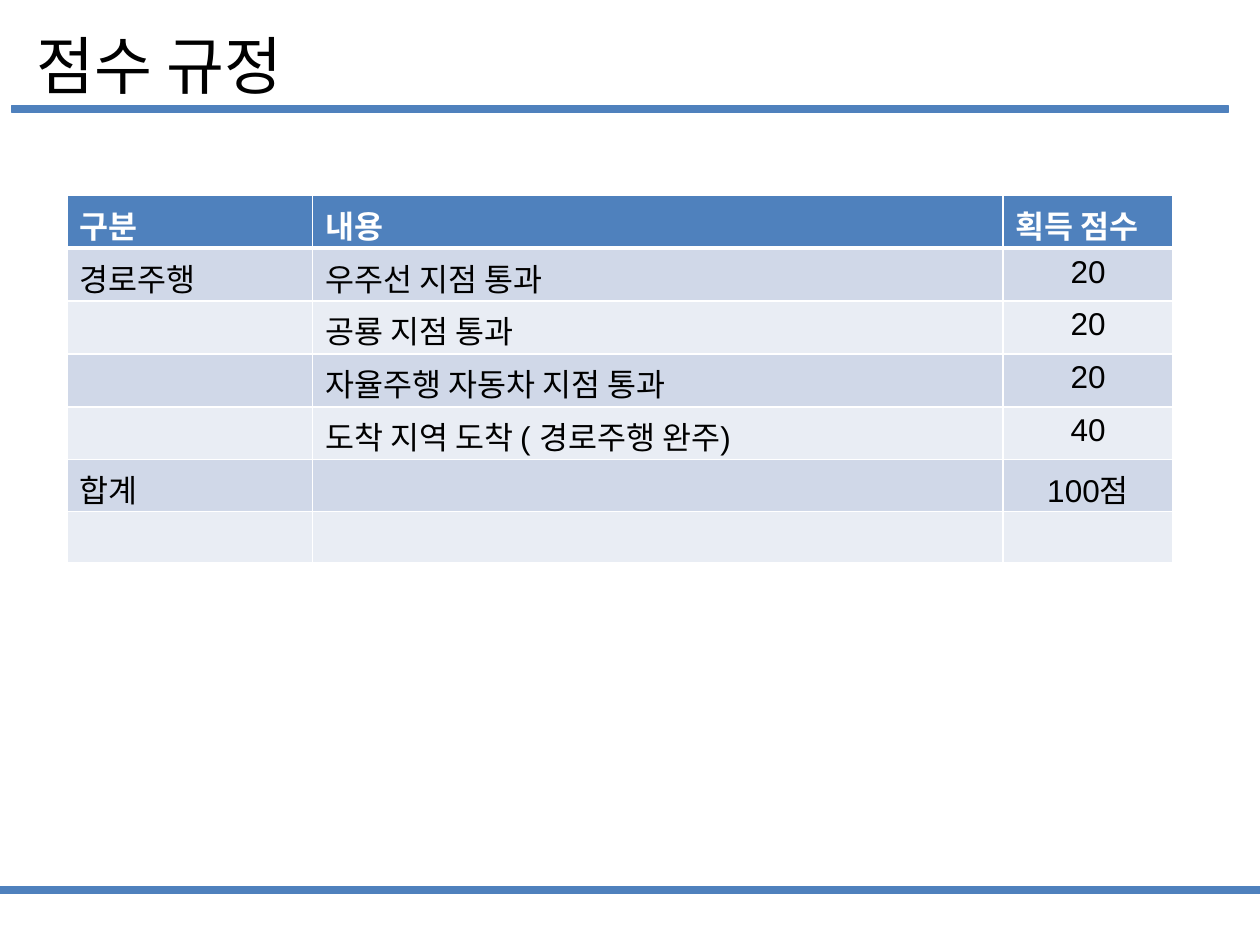
import dataclasses

import lxml.etree
import pptx
import pptx.dml.color
import pptx.enum.shapes
import pptx.enum.text
import pptx.oxml.ns
import pptx.util

Inches = pptx.util.Inches
Pt = pptx.util.Pt
qn = pptx.oxml.ns.qn
PP_ALIGN = pptx.enum.text.PP_ALIGN

ROWS = [
    ("구분", "내용", "획득 점수"),
    ("경로주행", "우주선 지점 통과", "20"),
    ("", "공룡 지점 통과", "20"),
    ("", "자율주행 자동차 지점 통과", "20"),
    ("", "도착 지역 도착 ( 경로주행 완주)", "40"),
    ("합계", "", "100점"),
    ("", "", ""),
]
COLUMN_WIDTHS = (1.95, 5.48, 1.35)
ROW_HEIGHTS = (0.42,) * 5 + (0.41,) * 2


@dataclasses.dataclass(frozen=True)
class Theme:
    accent: str = "4F81BD"
    bands: tuple = ("E9EDF4", "D0D8E8")
    text: str = "000000"
    light: str = "FFFFFF"
    title_font: str = "Noto Sans CJK KR"
    table_font: str = "Arial"
    title_size: int = 36
    table_size: int = 18


def rgb(value):
    return pptx.dml.color.RGBColor.from_string(value)


class SlideBuilder:
    def __init__(self, s, theme):
        self.s = s
        self.theme = theme

    def font(self, font, name, size, color, bold=False):
        font.name = name
        font.size = Pt(size)
        font.bold = bold
        font.color.rgb = rgb(color)

    def title(self, text, left, top, width, height):
        sp = self.s.shapes.title
        sp.left, sp.top = Inches(left), Inches(top)
        sp.width, sp.height = Inches(width), Inches(height)
        tf = sp.text_frame
        tf.text = text
        tf.word_wrap = False
        tf.auto_size = pptx.enum.text.MSO_AUTO_SIZE.SHAPE_TO_FIT_TEXT
        tf.vertical_anchor = pptx.enum.text.MSO_ANCHOR.TOP
        p = tf.paragraphs[0]
        p.alignment = PP_ALIGN.LEFT
        r = p.runs[0]
        self.font(r.font, self.theme.title_font, self.theme.title_size, self.theme.text)

    def bar(self, left, top, width, height):
        sp = self.s.shapes.add_shape(
            pptx.enum.shapes.MSO_SHAPE.RECTANGLE,
            Inches(left), Inches(top), Inches(width), Inches(height))
        sp.shadow.inherit = False
        sp.fill.solid()
        sp.fill.fore_color.rgb = rgb(self.theme.accent)
        sp.line.color.rgb = rgb(self.theme.accent)
        sp.line.width = Pt(0.75)

    def borders(self, cell, widths):
        tcPr = cell._tc.get_or_add_tcPr()
        for side, width in widths.items():
            ln = lxml.etree.SubElement(tcPr, qn(f"a:ln{side}"), w=str(Pt(width)))
            fill = lxml.etree.SubElement(ln, qn("a:solidFill"))
            lxml.etree.SubElement(fill, qn("a:srgbClr"), val=self.theme.light)

    def cell(self, cell, text, row, centered):
        header = row == 0
        self.borders(cell, {"L": 1, "R": 1, "T": 3 if row == 1 else 1, "B": 3 if header else 1})
        cell.fill.solid()
        cell.fill.fore_color.rgb = rgb(self.theme.accent if header else self.theme.bands[row % 2])
        cell.text_frame.text = text
        p = cell.text_frame.paragraphs[0]
        if centered:
            p.alignment = PP_ALIGN.CENTER
        color = self.theme.light if header else self.theme.text
        for r in p.runs:
            self.font(r.font, self.theme.table_font, self.theme.table_size, color, header)

    def table(self, rows, left, top, widths, heights):
        table = self.s.shapes.add_table(
            len(rows), len(widths), Inches(left), Inches(top),
            Inches(sum(widths)), Inches(sum(heights))).table
        for column, width in zip(table.columns, widths):
            column.width = Inches(width)
        for i, (texts, height) in enumerate(zip(rows, heights)):
            table.rows[i].height = Inches(height)
            for j, text in enumerate(texts):
                self.cell(table.cell(i, j), text, i, i > 0 and j == len(widths) - 1)


def main():
    """Build the score rules slide."""
    prs = pptx.Presentation()
    prs.slide_width, prs.slide_height = Inches(10), Inches(7.5)
    s = prs.slides.add_slide(prs.slide_layouts[5])
    builder = SlideBuilder(s, Theme())
    builder.bar(0, 7.04, 10, 0.05)
    builder.bar(0.09, 0.84, 9.66, 0.05)
    builder.title("점수 규정", 0.19, 0.16, 2.37, 0.71)
    builder.table(ROWS, 0.53, 1.55, COLUMN_WIDTHS, ROW_HEIGHTS)
    prs.save("out.pptx")


if __name__ == "__main__":
    main()
